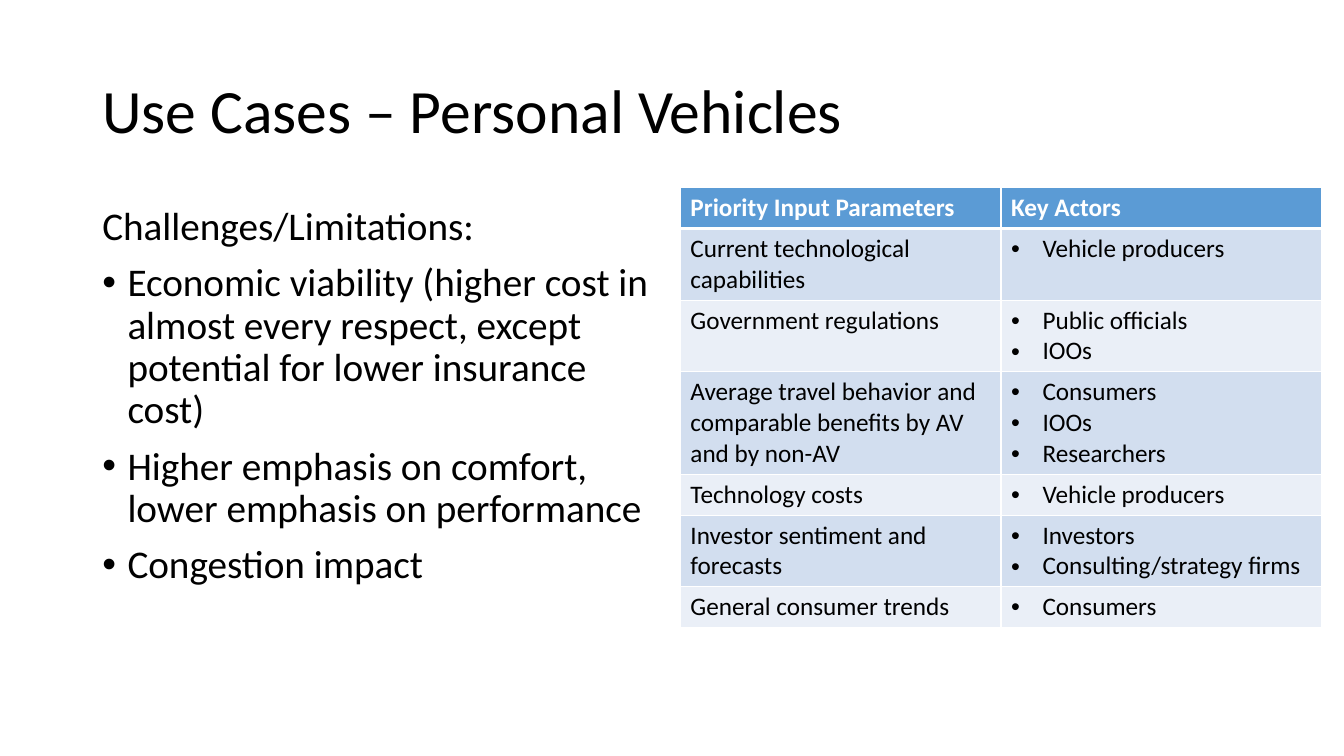
from dataclasses import dataclass

from lxml import etree
from pptx import Presentation
from pptx import util as u
from pptx.dml.color import RGBColor
from pptx.enum import text
from pptx.oxml.ns import qn


@dataclass(frozen=True)
class Theme:
    font: str = "Calibri"
    title_size: int = 44
    body_size: int = 28
    table_size: int = 18
    ink: str = "000000"
    white: str = "FFFFFF"
    header: str = "5B9BD5"
    bands: tuple = ("D2DEEF", "EAEFF7")


TITLE = "Use Cases – Personal Vehicles"
CHALLENGES = [
    "Economic viability (higher cost in almost every respect, "
    "except potential for lower insurance cost)",
    "Higher emphasis on comfort, lower emphasis on performance",
    "Congestion impact",
]
HEADINGS = ["Priority Input Parameters", "Key Actors"]
# Parameter, number of lines it takes, actors
PARAMETERS = [
    ("Current technological capabilities", 2, ["Vehicle producers"]),
    ("Government regulations", 1, ["Public officials", "IOOs"]),
    ("Average travel behavior and comparable benefits by AV and by non-AV", 3,
     ["Consumers", "IOOs", "Researchers"]),
    ("Technology costs", 1, ["Vehicle producers"]),
    ("Investor sentiment and forecasts", 2,
     ["Investors", "Consulting/strategy firms"]),
    ("General consumer trends", 1, ["Consumers"]),
]


def write(frame, words, *, size, color, font, bold=False, indent=0,
          line_spacing=None, space_before=None):
    """Add one paragraph, bulleted when indent (points) is given."""
    first = frame.paragraphs[0]
    is_first = not first.runs
    para = first if is_first else frame.add_paragraph()
    if indent:
        props = para._p.get_or_add_pPr()
        props.set("marL", str(u.Pt(indent)))
        props.set("indent", str(-u.Pt(indent)))
        etree.SubElement(props, qn("a:buFont")).set("typeface", "Arial")
        etree.SubElement(props, qn("a:buChar")).set("char", "•")
    if line_spacing:
        para.line_spacing = line_spacing
    if space_before and not is_first:
        para.space_before = u.Pt(space_before)
    span = para.add_run()
    span.text = words
    span.font.name = font
    span.font.size = u.Pt(size)
    span.font.bold = bold
    span.font.color.rgb = RGBColor.from_string(color)


def set_border(cell, side, color, width):
    """Draw one cell side: L, R, T or B, in that order and before the fill."""
    line = etree.SubElement(cell._tc.get_or_add_tcPr(), qn(f"a:ln{side}"))
    line.set("w", str(u.Pt(width)))
    fill = etree.SubElement(line, qn("a:solidFill"))
    etree.SubElement(fill, qn("a:srgbClr")).set("val", color)


class SlideBuilder:
    def __init__(self, page, theme):
        self.page = page
        self.theme = theme

    def text_box(self, left, top, width, height, anchor):
        box = self.page.shapes.add_textbox(
            u.Pt(left), u.Pt(top), u.Pt(width), u.Pt(height))
        frame = box.text_frame
        frame.word_wrap = True
        frame.vertical_anchor = anchor
        return frame

    def title(self, words):
        frame = self.text_box(66, 29, 828, 104.4, text.MSO_ANCHOR.MIDDLE)
        write(frame, words, size=self.theme.title_size, color=self.theme.ink,
              font=self.theme.font, line_spacing=0.9)

    def bullet_list(self, heading, items):
        frame = self.text_box(66, 144, 408, 342.6, text.MSO_ANCHOR.TOP)
        style = dict(size=self.theme.body_size, color=self.theme.ink,
                     font=self.theme.font, line_spacing=0.9, space_before=10)
        write(frame, heading, **style)
        for item in items:
            write(frame, item, indent=18, **style)

    def cell(self, cell, lines, fill, color, bold=False, indent=0,
             bottom_width=1):
        for side, width in zip("LRTB", (1, 1, 1, bottom_width)):
            set_border(cell, side, self.theme.white, width)
        cell.fill.solid()
        cell.fill.fore_color.rgb = RGBColor.from_string(fill)
        for line in lines:
            write(cell.text_frame, line, size=self.theme.table_size,
                  color=color, font=self.theme.font, bold=bold, indent=indent)

    def table(self, headings, rows):
        theme = self.theme
        column_width, line_height, padding = 229, 22, 7.2
        line_counts = [1] + [max(n, len(actors)) for _, n, actors in rows]
        heights = [padding + line_height * count for count in line_counts]
        grid = self.page.shapes.add_table(
            len(heights), len(headings), u.Pt(486), u.Pt(134),
            u.Pt(column_width * len(headings)), u.Pt(sum(heights))).table
        grid.horz_banding = False
        for column in grid.columns:
            column.width = u.Pt(column_width)
        for row, height in zip(grid.rows, heights):
            row.height = u.Pt(height)
        for col, heading in enumerate(headings):
            self.cell(grid.cell(0, col), [heading], theme.header, theme.white,
                      bold=True, bottom_width=3)
        for index, (parameter, _, actors) in enumerate(rows):
            fill = theme.bands[index % 2]
            self.cell(grid.cell(index + 1, 0), [parameter], fill, theme.ink)
            self.cell(grid.cell(index + 1, 1), actors, fill, theme.ink,
                      indent=22.5)


def main():
    deck = Presentation()
    deck.slide_width, deck.slide_height = u.Pt(960), u.Pt(540)
    page = deck.slides.add_slide(deck.slide_layouts[6])
    builder = SlideBuilder(page, Theme())
    builder.title(TITLE)
    builder.bullet_list("Challenges/Limitations:", CHALLENGES)
    builder.table(HEADINGS, PARAMETERS)
    deck.save("out.pptx")


if __name__ == "__main__":
    main()
